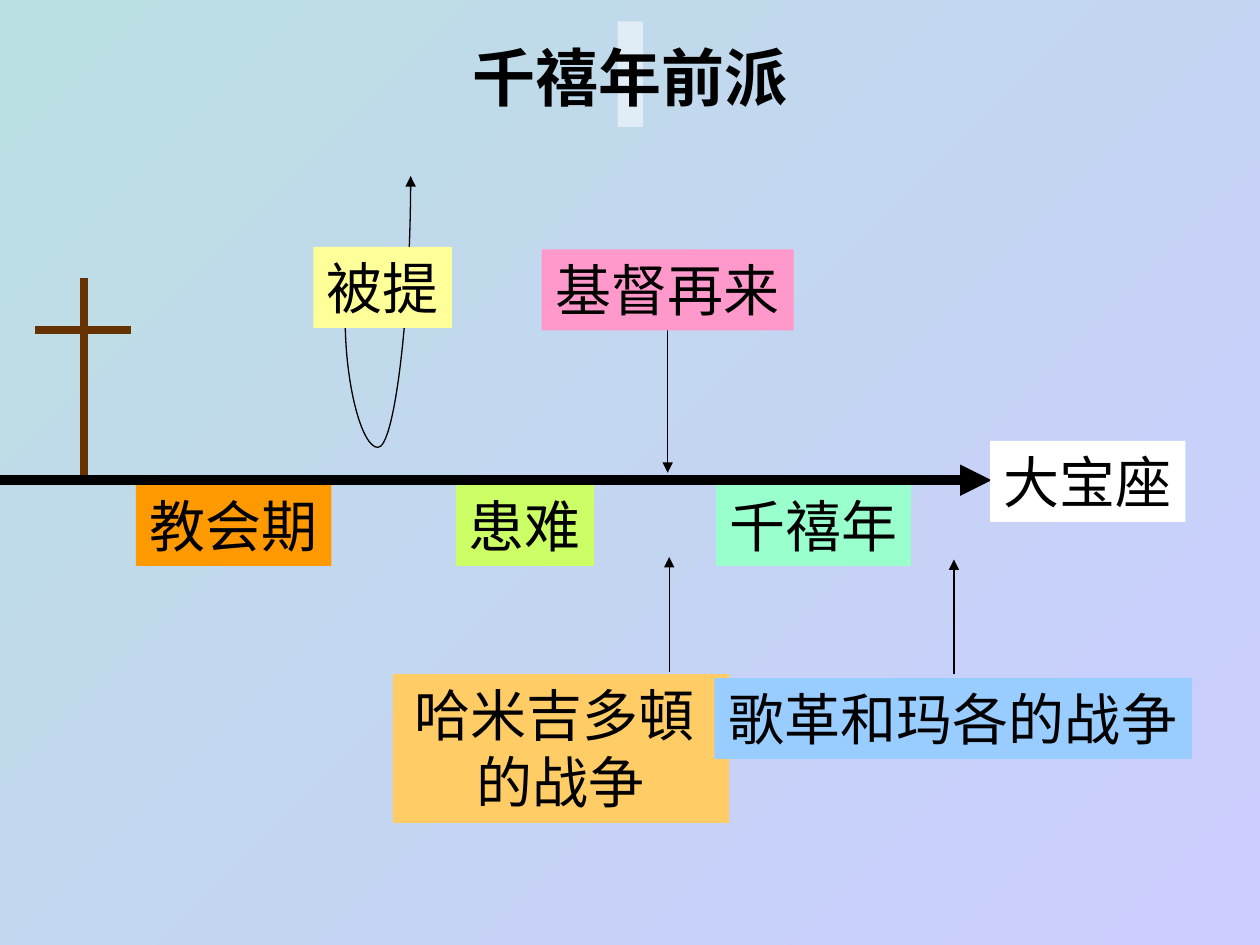
from lxml import etree
from pptx import Presentation
from pptx.dml.color import RGBColor
from pptx.enum import shapes, text
from pptx.oxml.ns import qn
from pptx.util import Cm, Pt

FONT = "Noto Sans CJK SC"
BLACK = RGBColor(0x00, 0x00, 0x00)
WHITE = RGBColor(0xFF, 0xFF, 0xFF)
BROWN = RGBColor(0x66, 0x33, 0x00)
TEAL = RGBColor(0xBB, 0xE0, 0xE3)
LAVENDER = RGBColor(0xCC, 0xCC, 0xFF)
ORANGE = RGBColor(0xFF, 0x99, 0x00)
LIME = RGBColor(0xCC, 0xFF, 0x66)
MINT = RGBColor(0x99, 0xFF, 0xCC)
YELLOW = RGBColor(0xFF, 0xFF, 0x99)
PINK = RGBColor(0xFF, 0x99, 0xCC)
AMBER = RGBColor(0xFF, 0xCC, 0x66)
SKY = RGBColor(0x99, 0xCC, 0xFF)

AXIS_Y = 9.68
PERIOD_Y = 9.78
LABEL_HEIGHT = 1.63


def write(frame, wording, size, bold=False):
    frame.text = wording
    frame.word_wrap = False
    for paragraph in frame.paragraphs:
        paragraph.alignment = text.PP_ALIGN.CENTER
        font = paragraph.font
        font.name, font.size, font.bold = FONT, Pt(size), bold
        font.color.rgb = BLACK
        defaults = paragraph._p.pPr.find(qn("a:defRPr"))
        etree.SubElement(defaults, qn("a:ea"), typeface=FONT)


def draw_line(parent, start, end, color, width, arrow=False,
              kind=shapes.MSO_CONNECTOR.STRAIGHT):
    line = parent.add_connector(kind, *[Cm(v) for v in start + end])
    line.line.color.rgb = color
    line.line.width = Pt(width)
    if arrow:
        etree.SubElement(line.line._get_or_add_ln(), qn("a:tailEnd"), type="triangle")
    etree.SubElement(line._element.spPr, qn("a:effectLst"))
    return line


prs = Presentation()
prs.slide_width, prs.slide_height = Cm(25.4), Cm(19.05)
slide = prs.slides.add_slide(prs.slide_layouts[5])

# Background, from top left to bottom right
backdrop = slide.background.fill
backdrop.gradient()
backdrop.gradient_angle = 315
for stop, position, color in zip(backdrop.gradient_stops, (0, 1), (TEAL, LAVENDER)):
    stop.position = position
    stop.color.rgb = color

# Translucent bar behind the title
bar = slide.shapes.add_shape(shapes.MSO_SHAPE.RECTANGLE,
                             Cm(12.45), Cm(0.43), Cm(0.51), Cm(2.13))
bar.shadow.inherit = False
bar.fill.solid()
bar.fill.fore_color.rgb = WHITE
bar.line.fill.background()
bar_color = bar._element.spPr.find(".//" + qn("a:srgbClr"))
etree.SubElement(bar_color, qn("a:alpha"), val="53000")

# Cross
cross = slide.shapes.add_group_shape().shapes
draw_line(cross, (1.7, 5.61), (1.7, AXIS_Y), BROWN, 4.5)
draw_line(cross, (0.71, 6.65), (2.64, 6.65), BROWN, 4.5)

# Timeline and the arrows to its events
draw_line(slide.shapes, (0, AXIS_Y), (19.99, AXIS_Y), BLACK, 6, arrow=True)
for x, start_y, end_y in ((13.46, 6.3, 9.53), (13.49, 13.54, 11.23), (19.23, 13.59, 11.28)):
    draw_line(slide.shapes, (x, start_y), (x, end_y), BLACK, 0.75, arrow=True)

# Rapture curve: dips below its label, then rises
rapture = draw_line(slide.shapes, (6.17, 4.34), (9.07, 5.66), BLACK, 0.75, arrow=True,
                    kind=shapes.MSO_CONNECTOR.CURVE)
rapture._element.spPr.find(qn("a:xfrm")).set("rot", str(270 * 60000))
bend = rapture._element.spPr.find(qn("a:prstGeom")).find(qn("a:avLst"))
etree.SubElement(bend, qn("a:gd"), name="adj1", fmla="val -88600")

# Labels: wording, left, top, width, height, fill
labels = (
    ("教会期", 2.74, PERIOD_Y, 3.94, LABEL_HEIGHT, ORANGE),
    ("患难", 9.19, PERIOD_Y, 2.79, LABEL_HEIGHT, LIME),
    ("千禧年", 14.43, PERIOD_Y, 3.94, LABEL_HEIGHT, MINT),
    ("被提", 6.32, 4.98, 2.79, LABEL_HEIGHT, YELLOW),
    ("基督再来", 10.92, 5.03, 5.08, LABEL_HEIGHT, PINK),
    ("哈米吉多頓 \n的战争", 7.92, 13.59, 6.78, 3, AMBER),
    ("歌革和玛各的战争", 14.4, 13.67, 9.63, LABEL_HEIGHT, SKY),
    ("大宝座", 19.96, 8.89, 3.94, LABEL_HEIGHT, WHITE),
)
for wording, left, top, width, height, color in labels:
    label = slide.shapes.add_textbox(Cm(left), Cm(top), Cm(width), Cm(height))
    label.fill.solid()
    label.fill.fore_color.rgb = color
    write(label.text_frame, wording, 32)
    label.text_frame.auto_size = text.MSO_AUTO_SIZE.SHAPE_TO_FIT_TEXT

# Title, brought in front of the bar
title = slide.shapes.title
title.left, title.top, title.width, title.height = Cm(9.22), Cm(0.64), Cm(6.96), Cm(1.8)
write(title.text_frame, "千禧年前派", 36, bold=True)
title.text_frame.auto_size = text.MSO_AUTO_SIZE.SHAPE_TO_FIT_TEXT
title.text_frame.vertical_anchor = text.MSO_ANCHOR.MIDDLE
slide.shapes._spTree.append(title._element)

prs.save("out.pptx")
